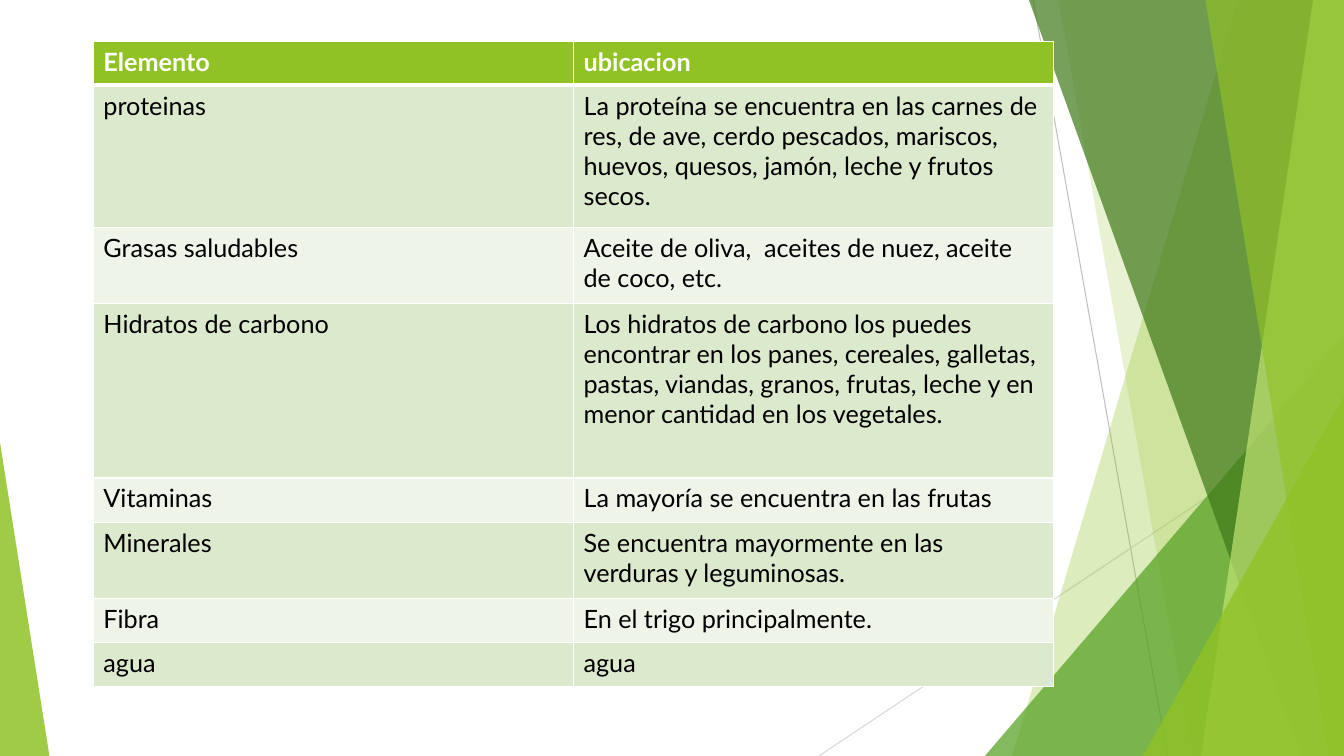
from pptx import Presentation
from pptx.dml.color import RGBColor
from pptx.enum.shapes import MSO_CONNECTOR, MSO_SHAPE
from pptx.oxml.ns import qn
from pptx.util import Pt
from lxml import etree

STRAIGHT = MSO_CONNECTOR.STRAIGHT
TRIANGLE = MSO_SHAPE.ISOSCELES_TRIANGLE

WIDTH, HEIGHT = 960, 540
COLORS = {
    "lime": "90C226", "green": "54A021", "forest": "3F7819", "pale": "C0E474",
    "steel": "BFBFBF", "silver": "D9D9D9", "white": "FFFFFF", "black": "000000",
    "band_dark": "DBE9CD", "band_light": "EEF4E8",
}

FOODS = [
    ("Elemento", "ubicacion"),
    ("proteinas", "La proteína se encuentra en las carnes de res, de ave, cerdo "
     "pescados, mariscos, huevos, quesos, jamón, leche y frutos secos."),
    ("Grasas saludables", "Aceite de oliva,  aceites de nuez, aceite de coco, etc."),
    ("Hidratos de carbono", "Los hidratos de carbono los puedes encontrar en los panes, "
     "cereales, galletas, pastas, viandas, granos, frutas, leche y en menor cantidad "
     "en los vegetales."),
    ("Vitaminas", "La mayoría se encuentra en las frutas"),
    ("Minerales", "Se encuentra mayormente en las verduras y leguminosas."),
    ("Fibra", "En el trigo principalmente."),
    ("agua", "agua"),
]
ONE_LINE, TWO_LINES = 31.5, 54.4
ROW_HEIGHTS = [ONE_LINE, 101.4, TWO_LINES, 124.8, ONE_LINE, TWO_LINES, ONE_LINE, ONE_LINE]
TABLE_LEFT, TABLE_TOP, COLUMN_WIDTH = 66.7, 29.4, 343

# start, end, color
RULES = [((738, 0), (834, HEIGHT), "steel"), ((WIDTH, 290), (585, HEIGHT), "silver")]
# Bands reach the right edge: top x, bottom x, color, opacity in percent.
# Triangles stand on the bottom edge: left, right, height, apex, color, opacity.
BACKDROP = [
    ("band", 884, 723, "lime", 30),
    ("band", 756, 852, "lime", 20),
    ("triangle", 703.5, WIDTH, 300, 1, "green", 72),
    ("band", 735, 929.5, "forest", 70),
    ("band", 938, 858, "pale", 70),
    ("band", 861, 949, "lime", 65),
    ("triangle", 816.5, WIDTH, 257, 1, "lime", 80),
    ("triangle", 0, 35.3, 224, 0, "lime", 85),
]


def rgb(color):
    return RGBColor.from_string(COLORS[color])


def add_rule(shapes, start, end, color):
    rule = shapes.add_connector(STRAIGHT, *map(Pt, start + end))
    rule.line.color.rgb = rgb(color)
    rule.line.width = Pt(0.75)
    etree.SubElement(rule._element.spPr, qn("a:effectLst"))


def add_band(shapes, top_x, bottom_x):
    builder = shapes.build_freeform(Pt(top_x), Pt(0))
    corners = [(WIDTH, 0), (WIDTH, HEIGHT), (bottom_x, HEIGHT)]
    builder.add_line_segments([(Pt(x), Pt(y)) for x, y in corners], close=True)
    return builder.convert_to_shape()


def add_triangle(shapes, left, right, height, apex):
    triangle = shapes.add_shape(
        TRIANGLE, Pt(left), Pt(HEIGHT - height), Pt(right - left), Pt(height))
    triangle.adjustments[0] = apex
    return triangle


def paint(shape, color, opacity):
    shape.shadow.inherit = False
    shape.fill.solid()
    shape.fill.fore_color.rgb = rgb(color)
    tint = shape._element.spPr.find(qn("a:solidFill")).find(qn("a:srgbClr"))
    etree.SubElement(tint, qn("a:alpha"), val=str(opacity * 1000))
    shape.line.fill.background()


def set_borders(cell, widths):
    """Draw white borders; widths maps L, R, T, B to points."""
    properties = cell._tc.get_or_add_tcPr()
    for position, (side, width) in enumerate(widths.items()):
        border = etree.Element(qn(f"a:ln{side}"), w=str(Pt(width)))
        fill = etree.SubElement(border, qn("a:solidFill"))
        etree.SubElement(fill, qn("a:srgbClr"), val=COLORS["white"])
        properties.insert(position, border)


def fill_cell(cell, text, row):
    header = row == 0
    cell.text = text
    font = cell.text_frame.paragraphs[0].runs[0].font
    text_format = {"name": "Lato", "size": Pt(18), "bold": header}
    for attribute, value in text_format.items():
        setattr(font, attribute, value)
    font.color.rgb = rgb("white" if header else "black")
    band = "lime" if header else "band_dark" if row % 2 else "band_light"
    cell.fill.solid()
    cell.fill.fore_color.rgb = rgb(band)
    set_borders(cell, {"L": 1, "R": 1, "T": 3 if row == 1 else 1, "B": 3 if header else 1})


def add_food_table(shapes):
    columns = len(FOODS[0])
    table = shapes.add_table(
        len(FOODS), columns, Pt(TABLE_LEFT), Pt(TABLE_TOP),
        Pt(columns * COLUMN_WIDTH), Pt(sum(ROW_HEIGHTS))).table
    for column in table.columns:
        column.width = Pt(COLUMN_WIDTH)
    for row, (food, height) in enumerate(zip(FOODS, ROW_HEIGHTS)):
        table.rows[row].height = Pt(height)
        for column, text in enumerate(food):
            fill_cell(table.cell(row, column), text, row)


def main():
    deck = Presentation()
    deck.slide_width, deck.slide_height = Pt(WIDTH), Pt(HEIGHT)
    blank_layout = deck.slide_layouts[6]
    shapes = deck.slides.add_slide(blank_layout).shapes
    for rule in RULES:
        add_rule(shapes, *rule)
    outlines = {"band": add_band, "triangle": add_triangle}
    for outline, *geometry, color, opacity in BACKDROP:
        paint(outlines[outline](shapes, *geometry), color, opacity)
    add_food_table(shapes)
    deck.save("out.pptx")


if __name__ == "__main__":
    main()
